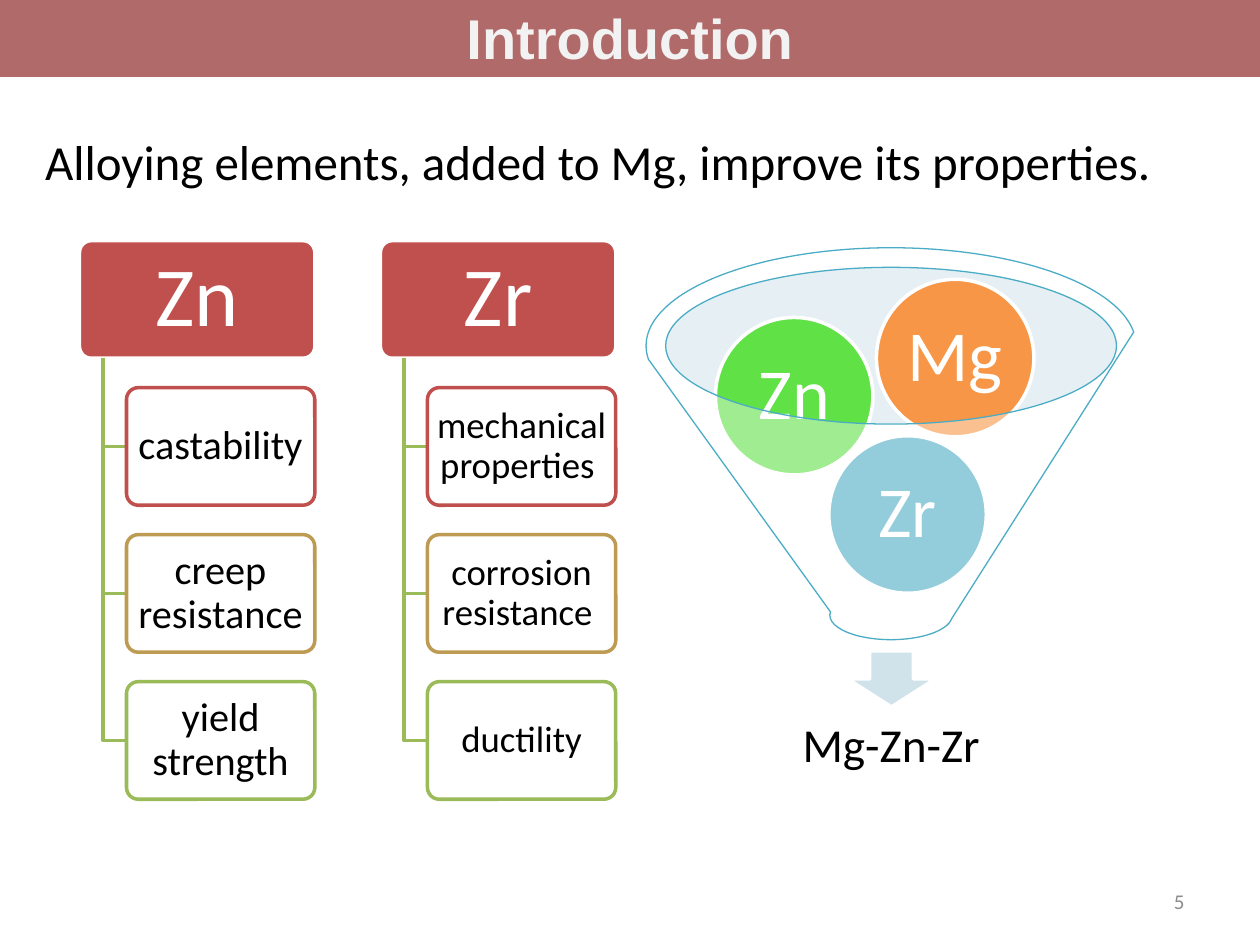
from lxml.etree import SubElement
from pptx import Presentation
from pptx.dml.color import RGBColor
from pptx.enum.shapes import MSO_SHAPE
from pptx.enum.text import MSO_ANCHOR, MSO_AUTO_SIZE, PP_ALIGN
from pptx.oxml.ns import qn
from pptx.util import Pt

WHITE = RGBColor(0xFF, 0xFF, 0xFF)
BLACK = RGBColor(0x00, 0x00, 0x00)
GREY = RGBColor(0x8C, 0x8C, 0x8C)
PALE = RGBColor(0xF2, 0xF2, 0xF2)
MAROON = RGBColor(0x95, 0x37, 0x35)
RED = RGBColor(0xC0, 0x50, 0x4D)
TAN = RGBColor(0xBD, 0x9B, 0x53)
GREEN = RGBColor(0x9B, 0xBB, 0x59)
LIME = RGBColor(0x60, 0xE1, 0x46)
ORANGE = RGBColor(0xF7, 0x96, 0x46)
TEAL = RGBColor(0x4B, 0xAC, 0xC6)
MIST = RGBColor(0xC1, 0xDB, 0xE5)
ICE = RGBColor(0xD0, 0xE3, 0xEA)


def set_fill(sp, color, opacity=100):
    sp.fill.solid()
    sp.fill.fore_color.rgb = color
    if opacity < 100:
        clr = sp._element.spPr.find(qn("a:solidFill")).find(qn("a:srgbClr"))
        SubElement(clr, qn("a:alpha")).set("val", str(opacity * 1000))


def set_line(sp, color, width):
    if color is None:
        sp.line.fill.background()
    else:
        sp.line.color.rgb = color
        sp.line.width = Pt(width)


def write(sp, text, size, color, align=PP_ALIGN.CENTER, inset=(7.2, 3.6),
          spacing=None, wrap=True, font="Calibri", bold=False):
    """Put one formatted paragraph in a shape; inset is (sides, top and bottom)."""
    side, end = (Pt(v) for v in inset)
    tf = sp.text_frame
    frame = {"auto_size": MSO_AUTO_SIZE.NONE, "word_wrap": wrap,
             "vertical_anchor": MSO_ANCHOR.MIDDLE, "margin_left": side,
             "margin_right": side, "margin_top": end, "margin_bottom": end}
    p = tf.paragraphs[0]
    r = p.add_run()
    r.text = text
    formats = (
        (tf, frame),
        (p, {"alignment": align, "line_spacing": spacing}),
        (r.font, {"name": font, "size": Pt(size), "bold": bold}),
    )
    for target, values in formats:
        for name, value in values.items():
            setattr(target, name, value)
    r.font.color.rgb = color


def add_shape(s, kind, box, fill, opacity=100, line=None, width=2):
    sp = s.shapes.add_shape(kind, *(Pt(v) for v in box))
    sp.shadow.inherit = False
    set_fill(sp, fill, opacity)
    set_line(sp, line, width)
    return sp


def add_text(s, box, *args, **kwargs):
    write(s.shapes.add_textbox(*(Pt(v) for v in box)), *args, **kwargs)


def add_card(s, box, fill, line, opacity=100):
    sp = add_shape(s, MSO_SHAPE.ROUNDED_RECTANGLE, box, fill, opacity, line)
    sp.adjustments[0] = 0.1
    return sp


def add_elbow(s, x, top, bottom, right):
    builder = s.shapes.build_freeform(Pt(x), Pt(top))
    builder.add_line_segments(
        [(Pt(x), Pt(bottom)), (Pt(right), Pt(bottom))], close=False)
    sp = builder.convert_to_shape()
    sp.shadow.inherit = False
    sp.fill.background()
    set_line(sp, GREEN, 2)


def add_title(s, box):
    sp = s.shapes.title
    sp.left, sp.top, sp.width, sp.height = (Pt(v) for v in box)
    set_fill(sp, MAROON, 74)
    write(sp, "Introduction", 32, PALE, font="Arial", bold=True)


def add_element_column(s, box, element, benefits, size):
    """Draw an element header with its benefits hanging from a trunk line."""
    left, top, width, height = box
    pitch = height / 4
    card_h = pitch * 0.8
    header = add_card(s, (left, top, width, card_h), RED, WHITE)
    write(header, element, 48, WHITE, inset=(7.2, 5), spacing=0.9)
    card_x = left + width * 0.2
    for i, (text, line) in enumerate(zip(benefits, (RED, TAN, GREEN)), 1):
        card_y = top + i * pitch
        add_elbow(s, left + width * 0.1, top + card_h,
                  card_y + card_h / 2, card_x)
        card = add_card(s, (card_x, card_y, width * 0.8, card_h),
                        WHITE, line, 90)
        write(card, text, size, BLACK, inset=(3, 2), spacing=0.9)


def add_alloy_funnel(s, box):
    left, top, width, height = box
    add_shape(s, MSO_SHAPE.OVAL, (left + 11, top + 11, width - 22, 89.3),
              MIST, 40)
    add_shape(s, MSO_SHAPE.DOWN_ARROW, (left + 115.2, top + 230.4, 50, 32),
              ICE, line=WHITE)
    add_text(s, (left + 20, top + 255.6, 240, 60), "Mg-Zn-Zr", 27, BLACK,
             inset=(15, 15), spacing=0.9)
    balls = (("Zr", 104.4, 107.4, TEAL), ("Zn", 39.6, 39.8, LIME),
             ("Mg", 131.6, 18, ORANGE))
    for element, x, y, color in balls:
        ball = add_shape(s, MSO_SHAPE.OVAL, (left + x, top + y, 90, 90),
                         color, line=WHITE)
        write(ball, element, 41, WHITE, inset=(4, 4), spacing=0.9)
    add_shape(s, MSO_SHAPE.FUNNEL, box, WHITE, 40, TEAL, 0.75)


def main():
    prs = Presentation()
    prs.slide_width, prs.slide_height = Pt(720), Pt(540)
    s = prs.slides.add_slide(prs.slide_layouts[5])
    add_title(s, (0, -2, 720, 46))
    add_text(s, (516, 500.5, 168, 28.75), "5", 12, GREY, PP_ALIGN.RIGHT)
    columns = (
        ("Zn", ("castability", "creep resistance ", "yield strength"), 23),
        ("Zr", ("mechanical properties ", "corrosion resistance ",
                "ductility"), 21),
    )
    for i, column in enumerate(columns):
        add_element_column(s, (45.4 + 172 * i, 137.5, 134.5, 336), *column)
    add_alloy_funnel(s, (369.2, 141.6, 280, 224))
    add_text(s, (18.7, 71.3, 653, 41.2),
             "Alloying elements, added to Mg, improve its properties.",
             28, BLACK, PP_ALIGN.LEFT, wrap=False)
    prs.save("out.pptx")


if __name__ == "__main__":
    main()
